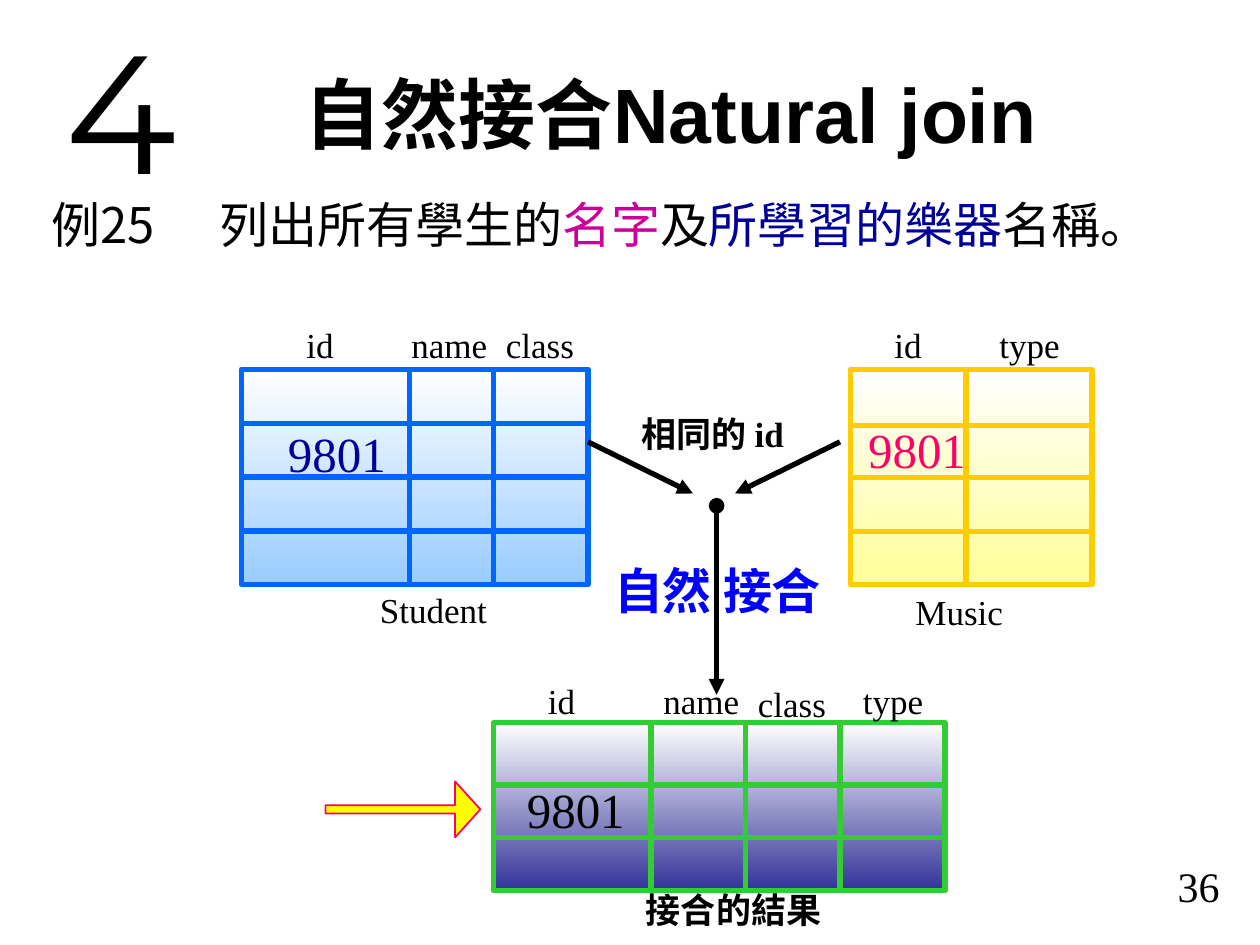
from itertools import accumulate

from lxml.etree import SubElement
from pptx import Presentation
from pptx.dml.color import RGBColor
from pptx.enum.shapes import MSO_CONNECTOR, MSO_SHAPE
from pptx.enum.text import MSO_ANCHOR as ANCHOR, MSO_AUTO_SIZE as AUTO_SIZE, PP_ALIGN as ALIGN
from pptx.oxml.ns import qn
from pptx.util import Pt

BLACK = RGBColor(0, 0, 0)
WHITE = RGBColor(255, 255, 255)
NAVY = RGBColor(0, 0, 0x99)
BLUE = RGBColor(0, 0, 255)
MAGENTA = RGBColor(0xCC, 0, 0x99)
PINK = RGBColor(255, 0, 0x66)
YELLOW = RGBColor(255, 255, 0)

SERIF, SANS, CJK, NUMERAL = "Times New Roman", "Arial", "Noto Sans CJK JP", "Montserrat"
LABEL_SIZE, ID_SIZE = 20, 28
LABEL_HEIGHT, ID_HEIGHT = 31, 41

TITLE = "自然接合Natural join"
CHAPTER = "4"
PAGE = "36"
EXAMPLE = [("例25\t列出所有學生的", BLACK), ("名字", MAGENTA), ("及", BLACK),
           ("所學習的樂器", NAVY), ("名稱。", BLACK)]

# Labels are (text, left, top, width).
RELATIONS = [
    dict(left=486, top=211, columns=[66, 72], rows=[32.2, 29.8, 30.6, 30.6],
         tint=RGBColor(255, 255, 0x99), border=RGBColor(255, 0xCC, 0),
         headers=[("id", 504, 181.5, 30), ("type", 564, 181.5, 54)],
         caption=("Music", 516, 334, 84), bold_caption=False,
         key=("9801", 489, 236, 72), key_color=PINK),
    dict(left=138, top=211, columns=[96, 48, 54], rows=[30.8] * 4,
         tint=RGBColor(0x99, 0xCC, 255), border=RGBColor(0, 0x66, 255),
         headers=[("id", 168, 181.5, 30), ("name", 228, 181.5, 66),
                  ("class", 282, 181.5, 66)],
         caption=("Student", 210, 332.5, 84), bold_caption=False,
         key=("9801", 157.5, 238.5, 72), key_color=NAVY),
    dict(left=282, top=413, columns=[90, 54, 54, 60], rows=[35.5, 30.2, 30.3],
         tint=RGBColor(0x33, 0x33, 0x99), border=RGBColor(0x33, 0xCC, 0x33),
         headers=[("id", 306, 385, 30), ("name", 372, 385, 66),
                  ("class", 426, 386.5, 66), ("type", 486, 385, 54)],
         caption=("接合的結果", 362, 504, 126), bold_caption=True,
         key=("9801", 294, 442, 78), key_color=BLACK),
]

JOIN_CONDITION = ("相同的 id", 359.5, 232, 104.5)
JOIN_NAME = ("自然 接合", 336, 317, 148)
JOIN_ARROWS = [  # start, end, start marker
    ((409.5, 289), (409.5, 397), "oval"),
    ((336, 252.5), (396, 282), None),
    ((480, 252.5), (420, 282), None),
]


def write(paragraph, runs, size, font=SERIF, bold=False):
    for text, color in runs:
        run = paragraph.add_run()
        run.text = text
        run.font.name, run.font.size, run.font.bold = font, Pt(size), bold
        run.font.color.rgb = color
        SubElement(run.font._element, qn("a:ea")).set("typeface", CJK)


def add_text(shapes, box, runs, size, align=ALIGN.LEFT, anchor=ANCHOR.TOP,
             auto_size=AUTO_SIZE.SHAPE_TO_FIT_TEXT, **style):
    frame = shapes.add_textbox(*map(Pt, box)).text_frame
    frame.word_wrap = True
    frame.auto_size = auto_size
    frame.vertical_anchor = anchor
    paragraph = frame.paragraphs[0]
    paragraph.alignment = align
    write(paragraph, runs, size, **style)
    return frame


def add_label(shapes, label, size=LABEL_SIZE, height=LABEL_HEIGHT, color=BLACK, **style):
    text, *box = label
    add_text(shapes, (*box, height), [(text, color)], size, **style)


def add_line(shapes, start, end, color, head=None, tail=None):
    line = shapes.add_connector(MSO_CONNECTOR.STRAIGHT, *map(Pt, (*start, *end)))
    line.line.color.rgb = color
    line.line.width = Pt(3)
    outline = line.line._get_or_add_ln()
    for tag, marker in (("a:headEnd", head), ("a:tailEnd", tail)):
        if marker:
            SubElement(outline, qn(tag)).set("type", marker)
    SubElement(line._element.spPr, qn("a:effectLst"))


def add_relation(slide, relation):
    shapes = slide.shapes.add_group_shape().shapes
    left, top, border = relation["left"], relation["top"], relation["border"]
    width, height = sum(relation["columns"]), sum(relation["rows"])
    grid = shapes.add_shape(MSO_SHAPE.RECTANGLE, *map(Pt, (left, top, width, height)))
    grid.shadow.inherit = False
    grid.fill.gradient()
    grid.fill.gradient_angle = 270
    for stop, color in zip(grid.fill.gradient_stops, (WHITE, relation["tint"])):
        stop.color.rgb = color
    for stop, position in zip(grid.fill.gradient_stops, (0, 1)):
        stop.position = position
    grid.line.color.rgb = border
    grid.line.width = Pt(3)
    for offset in accumulate(relation["rows"][:-1]):
        add_line(shapes, (left, top + offset), (left + width, top + offset), border)
    for offset in accumulate(relation["columns"][:-1]):
        add_line(shapes, (left + offset, top), (left + offset, top + height), border)
    for header in relation["headers"]:
        add_label(shapes, header)
    add_label(shapes, relation["caption"], bold=relation["bold_caption"])
    add_label(shapes, relation["key"], ID_SIZE, ID_HEIGHT, relation["key_color"])


def add_join(slide):
    shapes = slide.shapes.add_group_shape().shapes
    add_label(shapes, JOIN_CONDITION, bold=True)
    for start, end, head in JOIN_ARROWS:
        add_line(shapes, start, end, BLACK, head, "triangle")
    add_label(shapes, JOIN_NAME, ID_SIZE, ID_HEIGHT, BLUE, bold=True, align=ALIGN.CENTER)


def add_title(slide):
    title = slide.shapes.title
    title.left, title.top, title.width, title.height = map(Pt, (114.5, 31, 538, 63.5))
    frame = title.text_frame
    frame.auto_size = AUTO_SIZE.NONE
    frame.vertical_anchor = ANCHOR.BOTTOM
    frame.paragraphs[0].alignment = ALIGN.CENTER
    write(frame.paragraphs[0], [(TITLE, BLACK)], 44, SANS, True)


def add_example(slide):
    frame = add_text(slide.shapes, (0, 107.5, 702, 70), EXAMPLE, 28,
                     auto_size=AUTO_SIZE.NONE, font=CJK)
    frame.margin_left = Pt(29.5)
    tabs = SubElement(frame.paragraphs[0]._p.get_or_add_pPr(), qn("a:tabLst"))
    tab = SubElement(tabs, qn("a:tab"))
    tab.set("pos", str(Pt(96)))
    tab.set("algn", "l")


def add_result_pointer(slide):
    arrow = slide.shapes.add_shape(MSO_SHAPE.RIGHT_ARROW, *map(Pt, (186, 446.5, 88.5, 32)))
    arrow.adjustments[0], arrow.adjustments[1] = 0.15, 0.45
    arrow.shadow.inherit = False
    arrow.fill.solid()
    arrow.fill.fore_color.rgb = YELLOW
    arrow.line.color.rgb = PINK
    arrow.line.width = Pt(1)


def main():
    deck = Presentation()
    deck.slide_width, deck.slide_height = Pt(720), Pt(540)
    slide = deck.slides.add_slide(deck.slide_layouts[5])
    add_title(slide)
    add_text(slide.shapes, (24, 0, 90, 122.5), [(CHAPTER, BLACK)], 96,
             ALIGN.CENTER, font=NUMERAL)
    for relation in RELATIONS:
        add_relation(slide, relation)
    add_join(slide)
    add_example(slide)
    add_result_pointer(slide)
    add_text(slide.shapes, (554.5, 488, 149.5, 36), [(PAGE, BLACK)], 24,
             ALIGN.RIGHT, ANCHOR.MIDDLE, AUTO_SIZE.NONE)
    deck.save("out.pptx")


if __name__ == "__main__":
    main()
